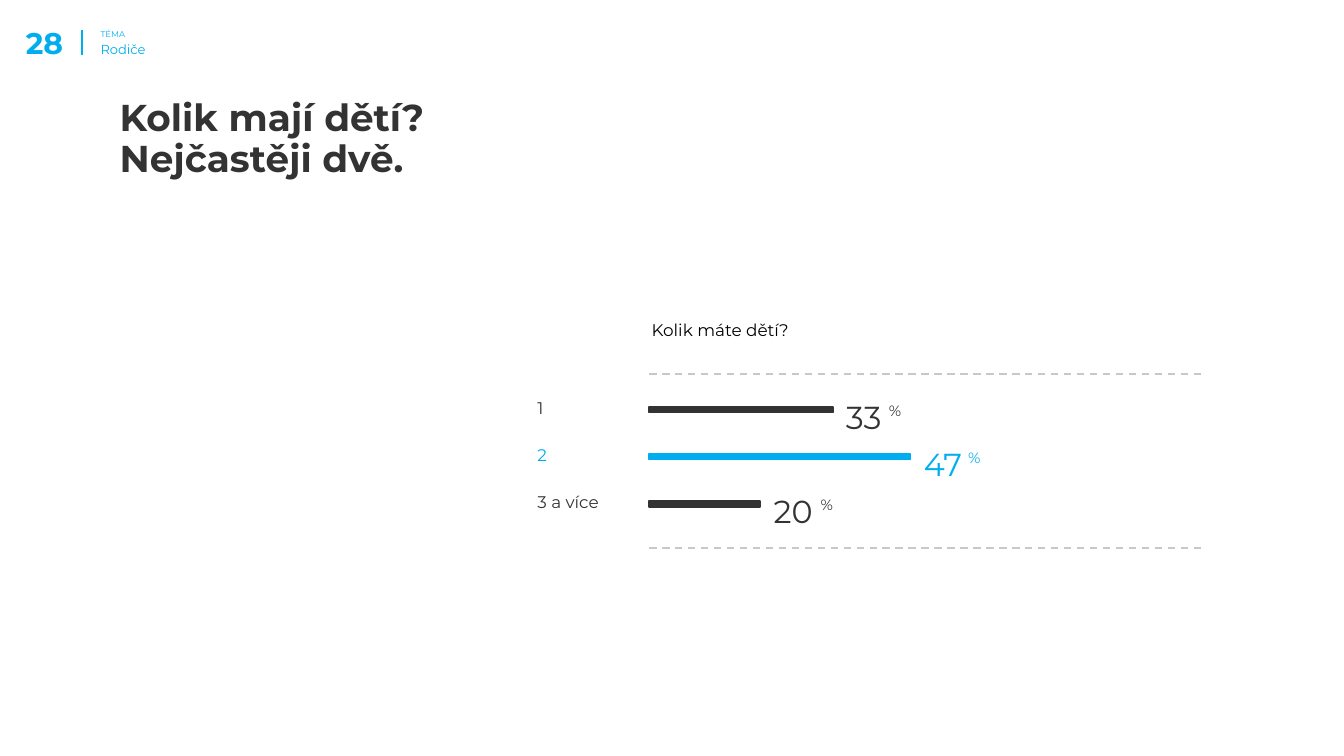
from lxml import etree
from pptx import Presentation
from pptx.dml.color import RGBColor
from pptx.enum.dml import MSO_LINE
from pptx.enum.shapes import MSO_CONNECTOR, MSO_SHAPE
from pptx.enum.text import MSO_ANCHOR, MSO_AUTO_SIZE, PP_ALIGN
from pptx.oxml.ns import qn
from pptx.util import Inches, Pt

STRAIGHT = MSO_CONNECTOR.STRAIGHT
RECTANGLE = MSO_SHAPE.RECTANGLE
DASH = MSO_LINE.DASH
TOP, BOTTOM = MSO_ANCHOR.TOP, MSO_ANCHOR.BOTTOM
LEFT, RIGHT = PP_ALIGN.LEFT, PP_ALIGN.RIGHT
NO_AUTOFIT = MSO_AUTO_SIZE.NONE

FONT = "Montserrat"
BLUE = RGBColor(0x00, 0xAE, 0xEF)
DARK = RGBColor(0x33, 0x33, 0x33)
GRAY = RGBColor(0xC8, 0xC8, 0xC8)
BLACK = RGBColor(0x00, 0x00, 0x00)
WHITE = RGBColor(0xFF, 0xFF, 0xFF)

# label, percentage, color, distance from the number to its percent sign
ANSWERS = [
    ("1", 33, DARK, 0.32),
    ("2", 47, BLUE, 0.33),
    ("3 a více", 20, DARK, 0.35),
]


def write(shape, text, size, color, bold=False, align=LEFT, anchor=TOP, insets=(0.1, 0.1, 0.1, 0.1)):
    tf = shape.text_frame
    tf.text = text
    tf.word_wrap = True
    tf.auto_size = NO_AUTOFIT
    tf.vertical_anchor = anchor
    tf.margin_left, tf.margin_top, tf.margin_right, tf.margin_bottom = map(Inches, insets)
    p = tf.paragraphs[0]
    p.alignment = align
    for r in p.runs:
        r.font.name = FONT
        r.font.size = Pt(size)
        r.font.bold = bold
        r.font.color.rgb = color
    return p


def add_text(slide, left, top, width, height, text, size, color, **style):
    box = slide.shapes.add_textbox(Inches(left), Inches(top), Inches(width), Inches(height))
    write(box, text, size, color, **style)


def add_line(slide, x1, y1, x2, y2, color, width):
    line = slide.shapes.add_connector(STRAIGHT, Inches(x1), Inches(y1), Inches(x2), Inches(y2))
    line.line.color.rgb = color
    line.line.width = Pt(width)
    etree.SubElement(line._element.spPr, qn("a:effectLst"))
    return line


def add_header(slide, left, top):
    # Page number, divider and topic
    add_text(slide, left, top, 0.47, 0.45, "28", 16, BLUE, bold=True,
             align=RIGHT, anchor=BOTTOM, insets=(0.1, 0.1, 0, 0))
    add_line(slide, left + 0.61, top + 0.22, left + 0.61, top + 0.41, BLUE, 0.75)
    add_text(slide, left + 0.65, top + 0.12, 0.63, 0.42, "TÉMA", 4.5, BLUE)
    add_text(slide, left + 0.65, top + 0.21, 0.75, 0.29, "Rodiče", 7, BLUE)


def add_title(slide, left, top, width, height):
    title = slide.shapes.title
    title.left, title.top = Inches(left), Inches(top)
    title.width, title.height = Inches(width), Inches(height)
    p = write(title, "Kolik mají dětí?\vNejčastěji dvě.", 20, DARK, bold=True)
    p.line_spacing = 0.9
    p.space_before = Pt(0)


def add_answer(slide, left, top, scale_width, label, value, color, sign_gap):
    bar_left = left + 0.93
    bar_width = scale_width * value / 100
    bar_end = bar_left + bar_width
    add_text(slide, left, top, 0.88, 0.31, label, 9, color)
    bar = slide.shapes.add_shape(RECTANGLE, Inches(bar_left), Inches(top + 0.17),
                                 Inches(bar_width), Inches(0.04))
    bar.shadow.inherit = False
    bar.fill.solid()
    bar.fill.fore_color.rgb = color
    bar.line.color.rgb = color
    bar.line.width = Pt(1)
    add_text(slide, bar_end, top, 0.67, 0.38, str(value), 17, color)
    add_text(slide, bar_end + sign_gap, top + 0.03, 0.46, 0.29, "%", 8, color)


def add_survey(slide, left, top, width, height):
    scale_left = left + 0.93
    scale_width = width - 0.93

    # Question and the dashed rules around the answers
    add_text(slide, scale_left - 0.08, top, 4.35, 0.35, "Kolik máte dětí?", 9, BLACK)
    for y in (top + 0.5, top + height):
        rule = add_line(slide, scale_left, y, left + width, y, GRAY, 1)
        rule.line.dash_style = DASH

    # One bar per answer
    for i, answer in enumerate(ANSWERS):
        add_answer(slide, left, top + 0.58 + 0.35 * i, scale_width, *answer)


def main():
    prs = Presentation()
    prs.slide_width = Inches(10)
    prs.slide_height = prs.slide_width * 9 // 16
    slide = prs.slides.add_slide(prs.slide_layouts[5])
    slide.background.fill.solid()
    slide.background.fill.fore_color.rgb = WHITE
    add_header(slide, 0, 0)
    add_title(slide, 0.79, 0.64, 6.58, 0.5)
    add_survey(slide, 3.9, 2.28, 5.07, 1.8)
    prs.save("out.pptx")


if __name__ == "__main__":
    main()
